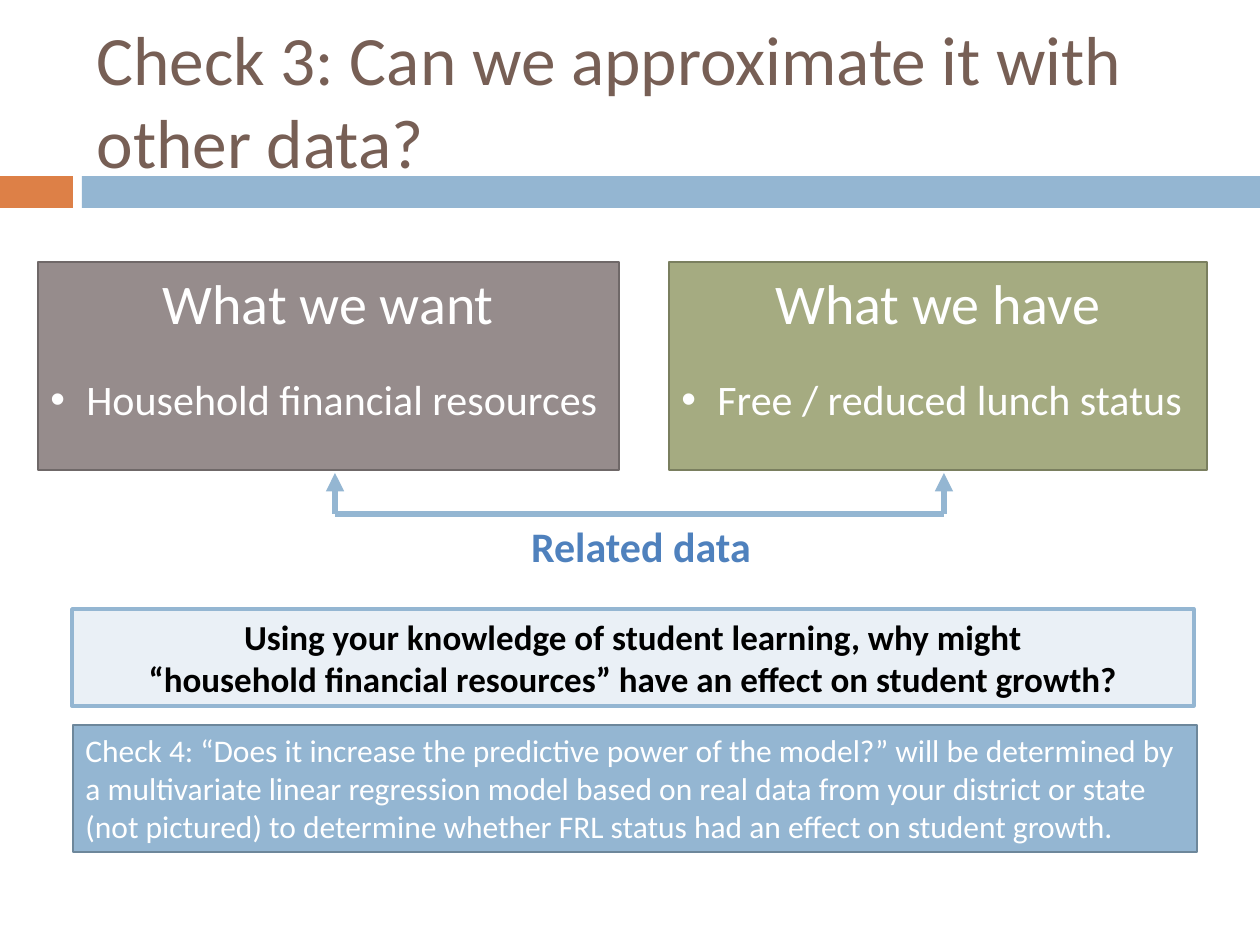
from lxml.etree import SubElement
from pptx import Presentation
from pptx.dml.color import RGBColor
from pptx.enum.shapes import MSO_CONNECTOR, MSO_SHAPE
from pptx.enum.text import MSO_ANCHOR, MSO_AUTO_SIZE, PP_ALIGN
from pptx.oxml.ns import qn
from pptx.util import Pt

# Content
FONT = "Calibri"
COLORS = {
    "title": "775F55", "orange": "DD8047", "blue": "94B6D2", "blue_edge": "6D879B",
    "pale": "EAF0F6", "taupe": "968C8C", "taupe_edge": "6F6868",
    "green": "A5AB81", "green_edge": "7A7F5F", "label": "4F81BD",
    "white": "FFFFFF", "black": "000000",
}
TITLE = "Check 3: Can we approximate it with other data?"
BANDS = [((0, 176, 73, 32), "orange"), ((82, 176, 1178, 32), "blue")]
# place, fill, edge, heading, bullet
CARDS = [
    ((38, 262, 581, 208), "taupe", "taupe_edge", "What we want", "Household financial resources"),
    ((669, 262, 538, 208), "green", "green_edge", "What we have", "Free / reduced lunch status"),
]
RELATION = "Related data"
QUESTION = ["Using your knowledge of student learning, why might",
            "“household financial resources” have an effect on student growth?"]
NEXT_CHECK = ("Check 4: “Does it increase the predictive power of the model?” will be "
              "determined by a multivariate linear regression model based on real data from "
              "your district or state (not pictured) to determine whether FRL status had an "
              "effect on student growth.")
BULLET_INDENT = 36
ARROW_XS, ARROW_TOP, ARROW_BASE = (335, 944), 473, 514


def px(length):
    return round(length * 914400 / 126)


def color(name):
    return RGBColor.from_string(COLORS[name])


def add_box(place, fill, edge=None, edge_width=1.5):
    box = slide.shapes.add_shape(MSO_SHAPE.RECTANGLE, *map(px, place))
    box.shadow.inherit = False
    box.fill.solid()
    box.fill.fore_color.rgb = color(fill)
    if edge:
        box.line.color.rgb = color(edge)
        box.line.width = Pt(edge_width)
    else:
        box.line.fill.background()
    return box


def write(frame, lines, size, ink, align=PP_ALIGN.LEFT, bold=False, anchor=MSO_ANCHOR.TOP):
    frame.word_wrap = True
    frame.auto_size = MSO_AUTO_SIZE.NONE
    frame.vertical_anchor = anchor
    frame.text = "\n".join(lines)
    for paragraph in frame.paragraphs:
        style(paragraph, size, ink, align, bold)


def style(paragraph, size, ink, align, bold=False):
    paragraph.alignment = align
    font = paragraph.font
    font.name, font.size, font.bold = FONT, Pt(size), bold
    font.color.rgb = color(ink)


def add_bullet(paragraph):
    properties = paragraph._p.get_or_add_pPr()
    properties.set("marL", str(px(BULLET_INDENT)))
    properties.set("indent", str(-px(BULLET_INDENT)))
    SubElement(properties, qn("a:buFont"), typeface="Arial")
    SubElement(properties, qn("a:buChar"), char="•")


def add_line(start, end, arrow=False):
    line = slide.shapes.add_connector(MSO_CONNECTOR.STRAIGHT, *map(px, start + end))
    line.line.color.rgb = color("blue")
    line.line.width = Pt(3.5)
    if arrow:
        SubElement(line.line._get_or_add_ln(), qn("a:tailEnd"), type="triangle")
    SubElement(line._element.spPr, qn("a:effectLst"))


deck = Presentation()
deck.slide_width, deck.slide_height = px(1260), px(945)
slide = deck.slides.add_slide(deck.slide_layouts[5])

# Title and bands
title = slide.shapes.title
title.left, title.top, title.width, title.height = map(px, (84, 31, 1124, 136))
write(title.text_frame, [TITLE], 39.6, "title", anchor=MSO_ANCHOR.MIDDLE)
for place, fill in BANDS:
    add_box(place, fill)

# Want and have cards
for place, fill, edge, heading, item in CARDS:
    card = add_box(place, fill, edge).text_frame
    write(card, [heading], 32, "white", PP_ALIGN.CENTER)
    bullet = card.add_paragraph()
    bullet.text = item
    bullet.space_before = Pt(22)
    add_bullet(bullet)
    style(bullet, 24, "white", PP_ALIGN.LEFT)

# Bracket joining the cards
left, right = ARROW_XS
add_line((left, ARROW_BASE), (right, ARROW_BASE))
for x in ARROW_XS:
    add_line((x, ARROW_BASE), (x, ARROW_TOP), arrow=True)
relation = slide.shapes.add_textbox(*map(px, (494, 514, 294, 64)))
write(relation.text_frame, [RELATION], 24, "label", PP_ALIGN.CENTER, bold=True)

# Question and next check
question = add_box((72, 609, 1122, 97), "pale", "blue", 2)
write(question.text_frame, QUESTION, 20, "black", PP_ALIGN.CENTER, bold=True)
next_check = add_box((73, 725, 1124, 127), "blue", "blue_edge")
write(next_check.text_frame, [NEXT_CHECK], 18, "white")

deck.save("out.pptx")
